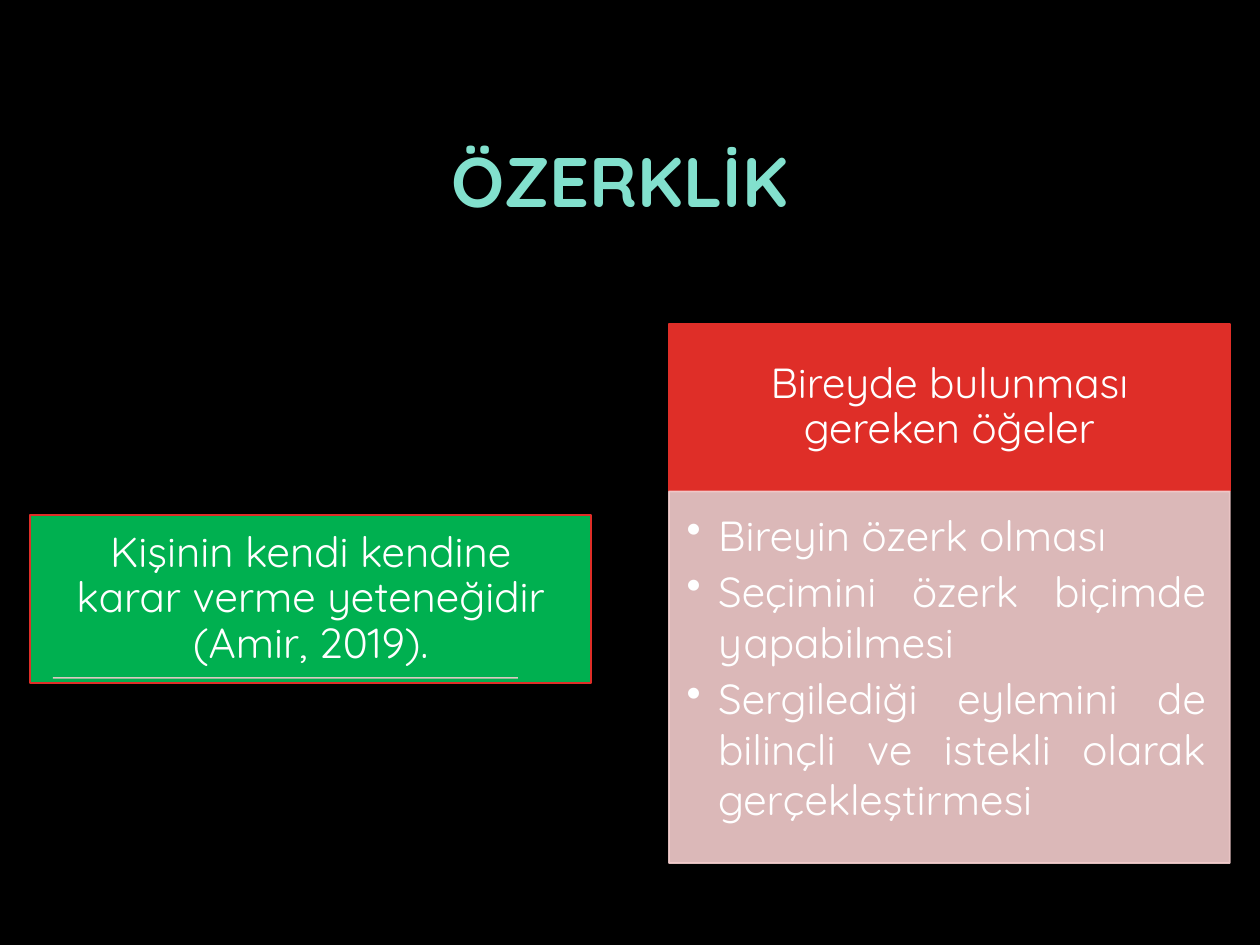
from lxml import etree
from pptx import Presentation
from pptx.dml.color import RGBColor
from pptx.enum.shapes import MSO_CONNECTOR, MSO_SHAPE
from pptx.enum.text import MSO_ANCHOR, PP_ALIGN
from pptx.oxml.ns import qn
from pptx.util import Inches, Pt

RECTANGLE = MSO_SHAPE.RECTANGLE
STRAIGHT = MSO_CONNECTOR.STRAIGHT
TOP, MIDDLE = MSO_ANCHOR.TOP, MSO_ANCHOR.MIDDLE
CENTER, JUSTIFY = PP_ALIGN.CENTER, PP_ALIGN.JUSTIFY

BLACK = RGBColor(0x00, 0x00, 0x00)
WHITE = RGBColor(0xFF, 0xFF, 0xFF)
GREEN = RGBColor(0x00, 0xB0, 0x50)
RED = RGBColor(0xDF, 0x2E, 0x28)
PINK = RGBColor(0xF3, 0xCD, 0xCD)
MINT = RGBColor(0x82, 0xE0, 0xCD)

FONT = "Quicksand"
DEFINITION_LEFT, ELEMENTS_LEFT = 0.24, 5.31
BOX_WIDTH, HEADER_HEIGHT = 4.45, 1.33
ELEMENTS_TOP = 2.57
HEADER_MARGINS = (0.19, 0.11, 0.19, 0.11)
LIST_MARGINS = (0.14, 0.14, 0.19, 0.21)
ELEMENTS = [
    "Bireyin özerk olması",
    "Seçimini özerk biçimde yapabilmesi",
    "Sergilediği eylemini de bilinçli ve istekli olarak gerçekleştirmesi",
]


def format_font(paragraph, size, color, bold=False):
    for run in paragraph.runs:
        run.font.name = FONT
        run.font.size = Pt(size)
        run.font.bold = bold
        run.font.color.rgb = color


def set_opacity(shape, percent):
    for color in shape._element.spPr.iter(qn("a:srgbClr")):
        etree.SubElement(color, qn("a:alpha"), val=str(percent * 1000))


def set_margins(text_frame, margins):
    left, top, right, bottom = map(Inches, margins)
    text_frame.margin_left, text_frame.margin_top = left, top
    text_frame.margin_right, text_frame.margin_bottom = right, bottom


def add_bullet(paragraph):
    properties = paragraph._p.get_or_add_pPr()
    properties.set("marL", str(Inches(0.25)))
    properties.set("indent", str(-Inches(0.25)))
    etree.SubElement(properties, qn("a:buChar"), char="•")


def add_title(slide, text):
    title = slide.shapes.title
    title.left, title.top = Inches(1.51), Inches(0.76)
    title.width, title.height = Inches(6.97), Inches(1.41)
    title.text_frame.text = text
    title.text_frame.vertical_anchor = MIDDLE
    paragraph = title.text_frame.paragraphs[0]
    paragraph.alignment = CENTER
    paragraph.line_spacing = 0.9
    format_font(paragraph, 40, MINT, bold=True)


def add_box(slide, left, top, height, fill, line):
    box = slide.shapes.add_shape(
        RECTANGLE, Inches(left), Inches(top), Inches(BOX_WIDTH), Inches(height)
    )
    box.shadow.inherit = False
    box.fill.solid()
    box.fill.fore_color.rgb = fill
    box.line.color.rgb = line
    box.line.width = Pt(1)
    box.text_frame.word_wrap = True
    return box


def add_header_box(slide, left, top, fill, text):
    box = add_box(slide, left, top, HEADER_HEIGHT, fill, RED)
    set_margins(box.text_frame, HEADER_MARGINS)
    box.text_frame.vertical_anchor = MIDDLE
    box.text_frame.text = text
    paragraph = box.text_frame.paragraphs[0]
    paragraph.alignment = CENTER
    paragraph.line_spacing = 0.9
    format_font(paragraph, 24, WHITE)


def add_list_box(slide, left, top, height, items):
    box = add_box(slide, left, top, height, PINK, PINK)
    set_opacity(box, 90)
    set_margins(box.text_frame, LIST_MARGINS)
    box.text_frame.vertical_anchor = TOP
    box.text_frame.text = "\n".join(items)
    for paragraph in box.text_frame.paragraphs:
        add_bullet(paragraph)
        paragraph.alignment = JUSTIFY
        paragraph.space_after = Pt(3.6)
        format_font(paragraph, 24, WHITE)


def add_rule(slide, left, top, width):
    rule = slide.shapes.add_connector(
        STRAIGHT, Inches(left), Inches(top), Inches(left + width), Inches(top)
    )
    rule.line.color.rgb = PINK
    rule.line.width = Pt(1)
    set_opacity(rule, 90)
    etree.SubElement(rule._element.spPr, qn("a:effectLst"))


def main():
    presentation = Presentation()
    presentation.slide_width = Inches(10)
    presentation.slide_height = Inches(7.5)
    slide = presentation.slides.add_slide(presentation.slide_layouts[5])
    slide.background.fill.solid()
    slide.background.fill.fore_color.rgb = BLACK

    add_header_box(
        slide, DEFINITION_LEFT, 4.09, GREEN,
        "Kişinin kendi kendine karar verme yeteneğidir (Amir, 2019).",
    )
    add_rule(slide, 0.42, 5.38, 3.69)
    add_header_box(
        slide, ELEMENTS_LEFT, ELEMENTS_TOP, RED, "Bireyde bulunması gereken öğeler"
    )
    add_list_box(slide, ELEMENTS_LEFT, ELEMENTS_TOP + HEADER_HEIGHT, 2.95, ELEMENTS)
    add_title(slide, "ÖZERKLİK ")

    presentation.save("out.pptx")


if __name__ == "__main__":
    main()
